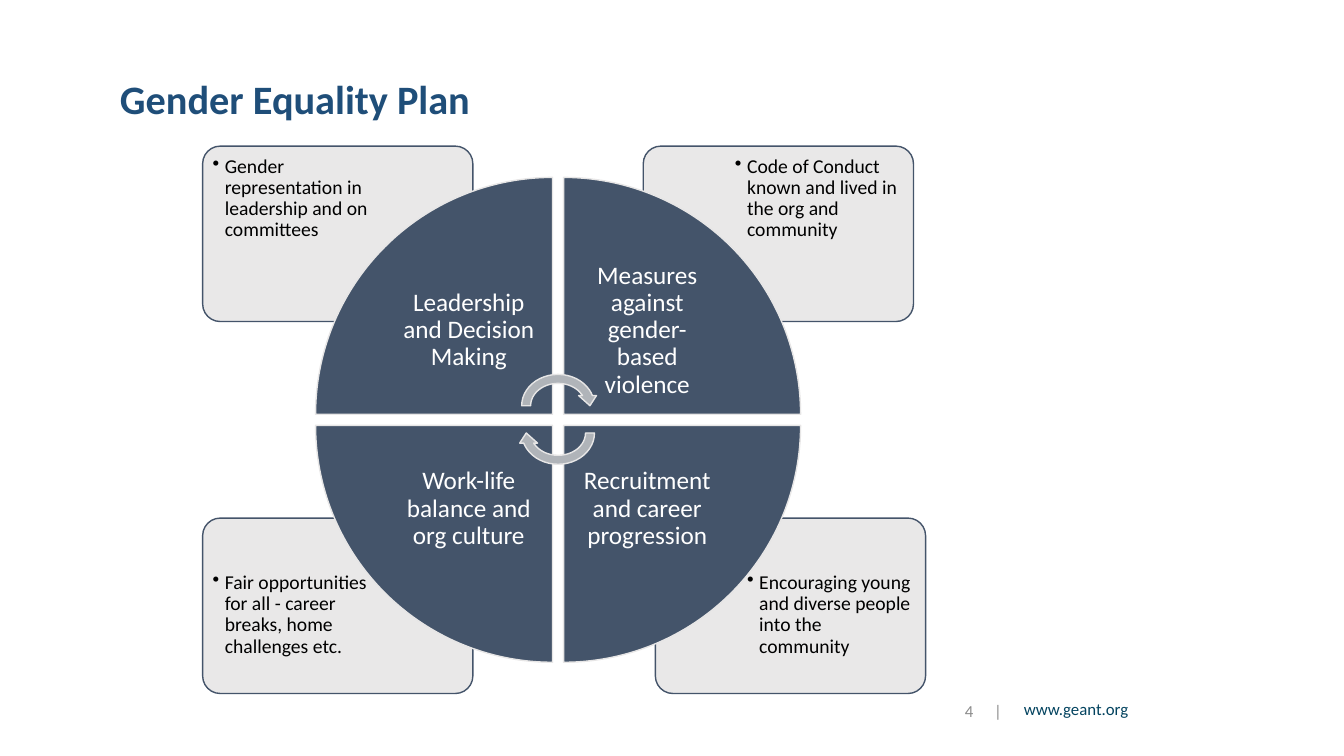
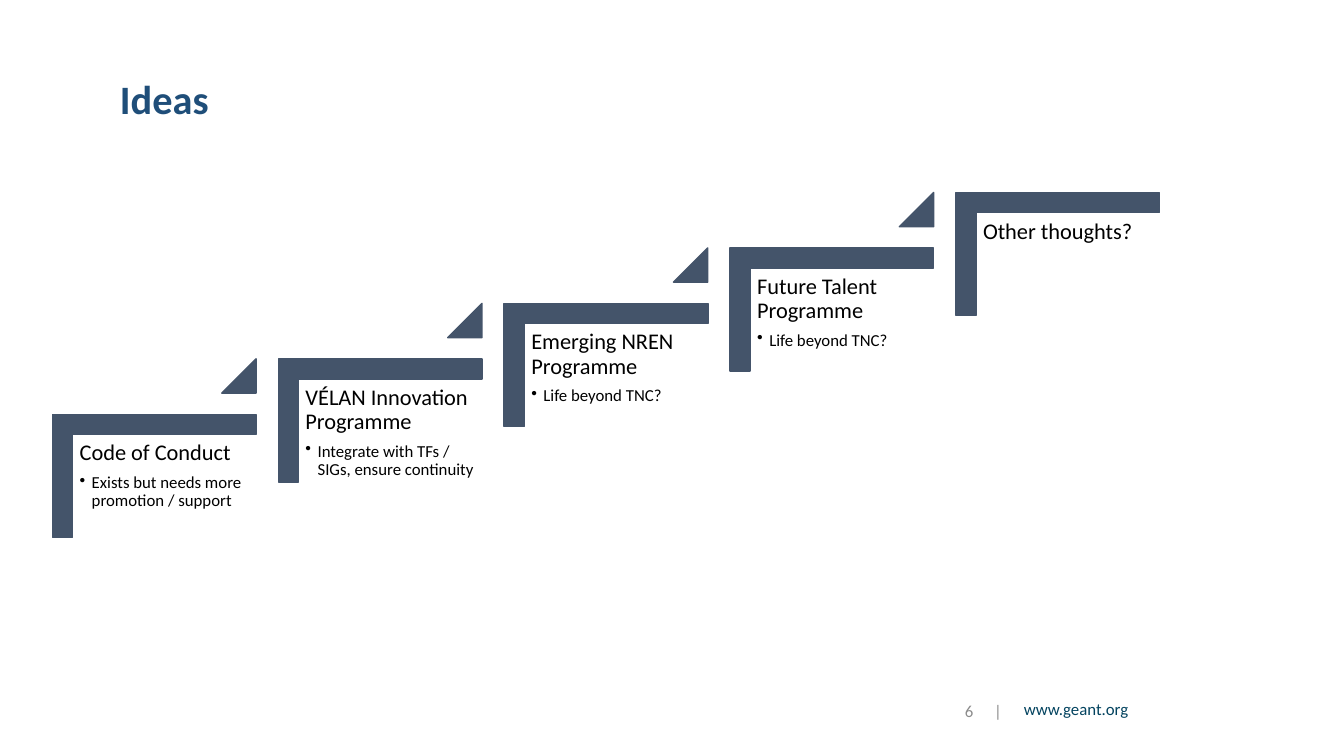
from lxml import etree
from pptx import Presentation
from pptx.dml.color import RGBColor
from pptx.enum.shapes import MSO_SHAPE
from pptx.enum.text import MSO_ANCHOR, MSO_AUTO_SIZE, PP_ALIGN
from pptx.oxml.ns import qn
from pptx.util import Inches, Pt

ROUNDED, WEDGE = MSO_SHAPE.ROUNDED_RECTANGLE, MSO_SHAPE.PIE_WEDGE
TRIANGLE, TURN_ARROW = MSO_SHAPE.ISOSCELES_TRIANGLE, MSO_SHAPE.CIRCULAR_ARROW
LEFT, CENTER, RIGHT = PP_ALIGN.LEFT, PP_ALIGN.CENTER, PP_ALIGN.RIGHT
TOP, MIDDLE = MSO_ANCHOR.TOP, MSO_ANCHOR.MIDDLE
NO_FIT = MSO_AUTO_SIZE.NONE
TITLE_ONLY = 5

COLORS = {
    "title": "1F4E79", "site": "03435F", "page": "8C8C8C",
    "slate": "44546A", "pale": "E7E6E6", "arrow": "B0B4B9",
    "white": "FFFFFF", "black": "000000",
}
FONTS = {
    "title": {"size": Pt(28.8), "bold": True},
    "label": {"size": Pt(18)},
    "heading": {"size": Pt(16)},
    "detail": {"size": Pt(14)},
    "small": {"size": Pt(12)},
}

AREAS = [
    (0, 0, 2.01, 1.45, "Leadership and Decision Making",
     "Gender representation in leadership and on committees"),
    (1, 0, 6.38, 1.45, "Measures against gender-based violence",
     "Code of Conduct known and lived in the org and community"),
    (1, 1, 6.5, 5.14, "Recruitment and career progression",
     "Encouraging young and diverse people into the community"),
    (0, 1, 2.01, 5.14, "Work-life balance and org culture",
     "Fair opportunities for all - career breaks, home challenges etc."),
]
IDEAS = [
    ("Code of Conduct", "Exists but needs more promotion / support"),
    ("VÉLAN Innovation Programme", "Integrate with TFs / SIGs, ensure continuity"),
    ("Emerging NREN Programme", "Life beyond TNC?"),
    ("Future Talent Programme", "Life beyond TNC?"),
    ("Other thoughts?", None),
]


def rgb(name):
    """Return the palette colour called name."""
    return RGBColor.from_string(COLORS[name])


def write(paragraph, text, style, color, align=LEFT, bullet=False, spacing=0.9):
    """Fill one paragraph with a formatted run."""
    if bullet:
        props = paragraph._p.get_or_add_pPr()
        props.set("marL", str(Inches(0.12)))
        props.set("indent", str(-Inches(0.12)))
        etree.SubElement(props, qn("a:buChar")).set("char", "•")
    for key, value in {"alignment": align, "line_spacing": spacing}.items():
        setattr(paragraph, key, value)
    run = paragraph.add_run()
    run.text = text
    for key, value in {"name": "Calibri", **FONTS[style]}.items():
        setattr(run.font, key, value)
    run.font.color.rgb = rgb(color)


def add_text_frame(slide, left, top, width, height, inset=0.07, anchor=TOP):
    """Add a wrapping text box and return its frame."""
    box = slide.shapes.add_textbox(
        Inches(left), Inches(top), Inches(width), Inches(height))
    margins = {f"margin_{side}": Inches(inset)
               for side in ("left", "right", "top", "bottom")}
    formats = {"word_wrap": True, "vertical_anchor": anchor, **margins}
    for key, value in formats.items():
        setattr(box.text_frame, key, value)
    return box.text_frame


def paint(figure, fill, line):
    """Give a figure a flat fill and a thin outline."""
    figure.shadow.inherit = False
    figure.fill.solid()
    figure.fill.fore_color.rgb = rgb(fill)
    figure.line.color.rgb = rgb(line)
    figure.line.width = Pt(1)


def add_figure(slide, kind, left, top, width, height, fill, line,
               rotation=0, adjust=()):
    """Add a filled and outlined preset shape."""
    figure = slide.shapes.add_shape(
        kind, Inches(left), Inches(top), Inches(width), Inches(height))
    paint(figure, fill, line)
    figure.rotation = rotation
    for index, value in enumerate(adjust):
        figure.adjustments[index] = value
    return figure


def add_page(deck, heading, number):
    """Add a slide with its title and footer."""
    slide = deck.slides.add_slide(deck.slide_layouts[TITLE_ONLY])
    title = slide.shapes.title
    place = {"left": 1.09, "top": 0.77, "width": 10.82, "height": 0.47}
    for key, value in place.items():
        setattr(title, key, Inches(value))
    title.text_frame.auto_size = NO_FIT
    title.text_frame.vertical_anchor = MIDDLE
    write(title.text_frame.paragraphs[0], heading, "title", "title")

    site = add_text_frame(slide, 9.61, 6.91, 1.68, 0.37, inset=0.1)
    site.margin_top = site.margin_bottom = Inches(0.05)
    write(site.paragraphs[0], "www.geant.org", "small", "site", RIGHT)

    page = add_text_frame(slide, 9.57, 6.87, 0.45, 0.36, inset=0, anchor=MIDDLE)
    props = page.paragraphs[0]._p.get_or_add_pPr()
    tab = etree.SubElement(etree.SubElement(props, qn("a:tabLst")), qn("a:tab"))
    tab.set("pos", str(Inches(0.29)))
    tab.set("algn", "l")
    write(page.paragraphs[0], f"{number}\t|", "small", "page", spacing=1)
    return slide


def add_card(slide, left, top, column, row, detail):
    """Add a corner card whose text keeps to its outer corner."""
    card = add_figure(slide, ROUNDED, left, top, 2.68, 1.74,
                      "pale", "slate", adjust=[0.1])
    tone = card._element.spPr.find(qn("a:solidFill"))[0]
    etree.SubElement(tone, qn("a:alpha")).set("val", "90000")
    frame = add_text_frame(slide, left + (0.03, 0.84)[column],
                           top + (0.03, 0.47)[row], 1.8, 1.23)
    write(frame.paragraphs[0], detail, "detail", "black", bullet=True)


def add_wheel(slide, left, top):
    """Add the four-part wheel with its labels and turning arrows."""
    radius, pitch, label_size = 2.35, 2.46, 1.66
    for turn, (column, row, _, _, label, _) in enumerate(AREAS):
        x, y = left + column * pitch, top + row * pitch
        add_figure(slide, WEDGE, x, y, radius, radius,
                   "slate", "pale", rotation=90 * turn)
        frame = add_text_frame(slide, x + (1 - column) * (radius - label_size),
                               y + (1 - row) * (radius - label_size),
                               label_size, label_size, 0.14, MIDDLE)
        write(frame.paragraphs[0], label, "label", "white", CENTER)
    for drop, rotation in ((1.91, 0), (2.18, 180)):
        add_figure(slide, TURN_ARROW, left + 2, top + drop, 0.81, 0.71,
                   "arrow", "pale", rotation=rotation)


def add_step(slide, left, top, heading, detail):
    """Add one stair step with its heading and optional detail."""
    width, height, bar = 2.02, 1.22, 0.2
    outline = [(width, 0), (width, bar), (bar, bar), (bar, height), (0, height)]
    pen = slide.shapes.build_freeform(Inches(left), Inches(top))
    pen.add_line_segments([(Inches(left + x), Inches(top + y))
                           for x, y in outline])
    paint(pen.convert_to_shape(), "slate", "slate")
    frame = add_text_frame(slide, left + bar, top + bar, 1.83, 1.6)
    write(frame.paragraphs[0], heading, "heading", "black")
    if detail:
        frame.paragraphs[0].space_after = Pt(6)
        write(frame.add_paragraph(), detail, "small", "black", bullet=True)


def build_plan(deck):
    """Build the equality plan slide."""
    slide = add_page(deck, "Gender Equality Plan", 4)
    for column, row, left, top, _, detail in AREAS:
        add_card(slide, left, top, column, row, detail)
    add_wheel(slide, 3.13, 1.76)


def build_ideas(deck):
    """Build the rising stairs of ideas."""
    slide = add_page(deck, "Ideas", 6)
    for index, (heading, detail) in enumerate(IDEAS):
        left, top = 0.52 + 2.24 * index, 4.11 - 0.55 * index
        add_step(slide, left, top, heading, detail)
        if index < len(IDEAS) - 1:
            add_figure(slide, TRIANGLE, left + 1.68, top - 0.55, 0.34, 0.34,
                       "slate", "slate", adjust=[1])


def main():
    """Build and save the deck."""
    deck = Presentation()
    deck.slide_width, deck.slide_height = Inches(13.33), Inches(7.5)
    build_plan(deck)
    build_ideas(deck)
    deck.save("out.pptx")


if __name__ == "__main__":
    main()
